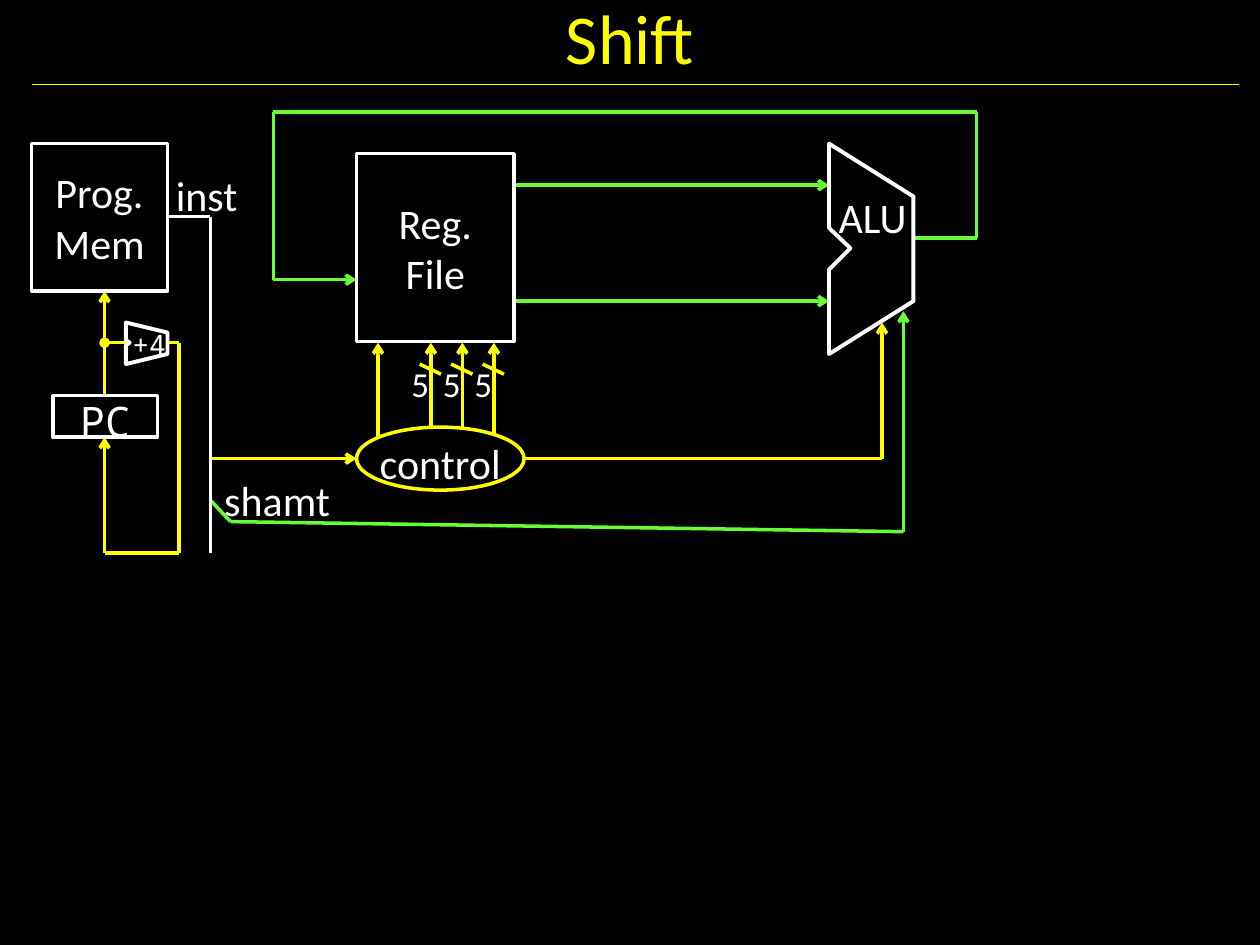
import itertools
from dataclasses import dataclass
from typing import Any

import pptx
import pptx.dml.color
import pptx.enum.shapes
import pptx.enum.text
import pptx.oxml
import pptx.oxml.ns
import pptx.util
from pptx.util import Inches

SHAPE = pptx.enum.shapes.MSO_SHAPE
NONE = pptx.enum.text.MSO_AUTO_SIZE.NONE
MIDDLE = pptx.enum.text.MSO_ANCHOR.MIDDLE
CENTER = pptx.enum.text.PP_ALIGN.CENTER


def rgb(code):
    return pptx.dml.color.RGBColor.from_string(code)


@dataclass(frozen=True)
class Theme:
    background: Any = rgb("000000")
    title: Any = rgb("FFFF00")
    rule: Any = rgb("F9F900")
    block: Any = rgb("FFFFFF")
    control: Any = rgb("FFFF00")
    data: Any = rgb("66FF33")
    font: str = "Calibri"
    mono: str = "Noto Sans Mono"
    title_size: int = 40
    label_size: int = 24
    width_size: int = 20
    adder_size: int = 16
    thin: float = 0.75
    wire: float = 2
    outline: float = 2.25
    spacing: float = 1.16


THEME = Theme()


def assign(target, values):
    for name, value in values.items():
        setattr(target, name, value)


def set_line(shape, color, width=THEME.wire):
    shape.line.color.rgb = color
    shape.line.width = pptx.util.Pt(width)


def add_line_end(connector, end, kind):
    line = connector.line._get_or_add_ln()
    mark = pptx.oxml.parse_xml(f'<a:{end} {pptx.oxml.ns.nsdecls("a")} type="{kind}"/>')
    line.append(mark)


@dataclass
class Region:
    """A box on the slide; parts are placed in inches from its top left corner."""
    slide: Any
    left: float
    top: float
    width: float
    height: float

    def point(self, x, y):
        return Inches(self.left + x), Inches(self.top + y)

    def set_text(self, shape, text, size=THEME.label_size, font=THEME.font,
                 color=THEME.block, spacing=THEME.spacing, wrap=False):
        frame = shape.text_frame
        frame.text = text
        assign(frame, dict(auto_size=NONE, word_wrap=wrap, vertical_anchor=MIDDLE,
                           margin_left=0, margin_right=0, margin_top=0, margin_bottom=0))
        for paragraph in frame.paragraphs:
            assign(paragraph, dict(alignment=CENTER, line_spacing=spacing))
            for run in paragraph.runs:
                assign(run.font, dict(name=font, size=pptx.util.Pt(size)))
                run.font.color.rgb = color

    def label(self, text, x, y, width, height, **style):
        box = self.slide.shapes.add_textbox(*self.point(x, y), Inches(width), Inches(height))
        self.set_text(box, text, **style)

    def node(self, text, x, y, width, height, kind=SHAPE.RECTANGLE,
             color=THEME.block, fill=None, **style):
        shape = self.slide.shapes.add_shape(
            kind, *self.point(x, y), Inches(width), Inches(height))
        shape.shadow.inherit = False
        if fill is None:
            shape.fill.background()
        else:
            shape.fill.solid()
            shape.fill.fore_color.rgb = fill
        set_line(shape, color)
        self.set_text(shape, text, **style)

    def outline(self, points):
        start, *rest = [self.point(*corner) for corner in points]
        builder = self.slide.shapes.build_freeform(*start)
        builder.add_line_segments(rest, close=True)
        shape = builder.convert_to_shape()
        shape.shadow.inherit = False
        shape.fill.background()
        set_line(shape, THEME.block, THEME.outline)

    def wire(self, points, color, head=None, tail=None, width=THEME.wire):
        """Join the points with straight segments; marks go on the outer ends."""
        for start, end in itertools.pairwise(points):
            segment = self.slide.shapes.add_connector(
                pptx.enum.shapes.MSO_CONNECTOR.STRAIGHT,
                *self.point(*start), *self.point(*end))
            set_line(segment, color, width)
            if head and start == points[0]:
                add_line_end(segment, "headEnd", head)
            if tail and end == points[-1]:
                add_line_end(segment, "tailEnd", tail)
            segment._element.spPr.append(
                pptx.oxml.parse_xml(f'<a:effectLst {pptx.oxml.ns.nsdecls("a")}/>'))


def draw_title(region):
    region.wire([(0, 0.67), (9.58, 0.67)], THEME.rule, width=THEME.thin)
    region.label("Shift", 0, 0, region.width, region.height, spacing=1.0, wrap=True,
                 size=THEME.title_size, color=THEME.title)


def draw_control(region):
    # Register control signals; the last three are 5 bits wide
    for x, start in [(0.17, 0.84), (0.59, 0.75), (0.84, 0.75), (1.09, 0.84)]:
        region.wire([(x, start), (x, 0)], THEME.control, tail="arrow")
    for x in (0.59, 0.84, 1.09):
        region.wire([(x - 0.09, 0.17), (x + 0.08, 0.25)], THEME.control)
        region.label("5", x - 0.17, 0.17, 0.17, 0.25, size=THEME.width_size)
    region.node("control", 0, 0.67, region.width, 0.5, SHAPE.OVAL,
                THEME.control, THEME.background)


def draw_registers(region):
    region.node("Reg.\vFile", 0, 0, region.width, region.height, spacing=1.0, wrap=True)


def draw_alu(region):
    w, h = region.width, region.height
    region.outline([(0, 0), (w, 0.42), (w, h - 0.42), (0, h),
                    (0, 1), (0.17, 0.83), (0, 0.67)])
    region.label("ALU", 0.09, 0.33, 0.51, 0.43)


def draw_fetch(region):
    bottom, bus = region.height, region.width
    # Program counter, its increment loop and the program memory
    region.wire([(0.58, 2), (0.58, 1.17)], THEME.control, tail="arrow")
    region.wire([(0.58, 1.58), (0.75, 1.58)], THEME.control, head="oval")
    region.wire([(1.08, 1.58), (1.17, 1.58), (1.17, bottom), (0.58, bottom), (0.58, 2.33)],
                THEME.control, tail="arrow")
    region.node("PC", 0.17, 2, 0.83, 0.33, font=THEME.mono)
    region.node("Prog.\nMem", 0, 0, 1.08, 1.17, spacing=1.0, wrap=True)
    # Adder
    region.outline([(0.75, 1.42), (1.08, 1.5), (1.08, 1.67), (0.75, 1.75),
                    (0.75, 1.6), (0.78, 1.58), (0.75, 1.56)])
    region.label("+4", 0.85, 1.45, 0.17, 0.25, size=THEME.adder_size, font=THEME.mono)
    # Instruction bus
    region.wire([(1.08, 0.58), (bus, 0.58), (bus, bottom)], THEME.block)
    region.label("inst", 1.17, 0.25, 0.44, 0.25)


def draw_wiring(region):
    right, bottom = region.width, region.height
    # Register reads and the result sent back
    for y in (0.58, 1.5):
        region.wire([(2.41, y), (4.91, y)], THEME.data, tail="arrow")
    region.wire([(5.58, 1), (right, 1), (right, 0), (0.5, 0), (0.5, 1.33), (1.16, 1.33)],
                THEME.data, tail="arrow")
    # Instruction to control, control to ALU
    region.wire([(0, 2.75), (1.16, 2.75)], THEME.control, tail="arrow")
    region.wire([(2.5, 2.75), (5.33, 2.75), (5.33, 1.67)], THEME.control, tail="arrow")
    # Shift amount
    region.wire([(0, 3.08), (0.16, 3.25), (5.5, bottom), (5.5, 1.58)],
                THEME.data, tail="arrow")
    region.label("shamt", 0.23, 2.92, 0.6, 0.25)


def main():
    deck = pptx.Presentation()
    assign(deck, dict(slide_width=Inches(10), slide_height=Inches(7.5)))
    slide = deck.slides.add_slide(deck.slide_layouts[6])
    slide.background.fill.solid()
    slide.background.fill.fore_color.rgb = THEME.background

    draw_title(Region(slide, 0.25, 0, 9.5, 0.58))
    draw_wiring(Region(slide, 1.67, 0.89, 6.08, 3.33))
    draw_registers(Region(slide, 2.83, 1.22, 1.25, 1.49))
    draw_alu(Region(slide, 6.58, 1.14, 0.67, 1.67))
    draw_fetch(Region(slide, 0.25, 1.14, 1.42, 3.25))
    draw_control(Region(slide, 2.83, 2.72, 1.33, 1.17))
    deck.save("out.pptx")


if __name__ == "__main__":
    main()
